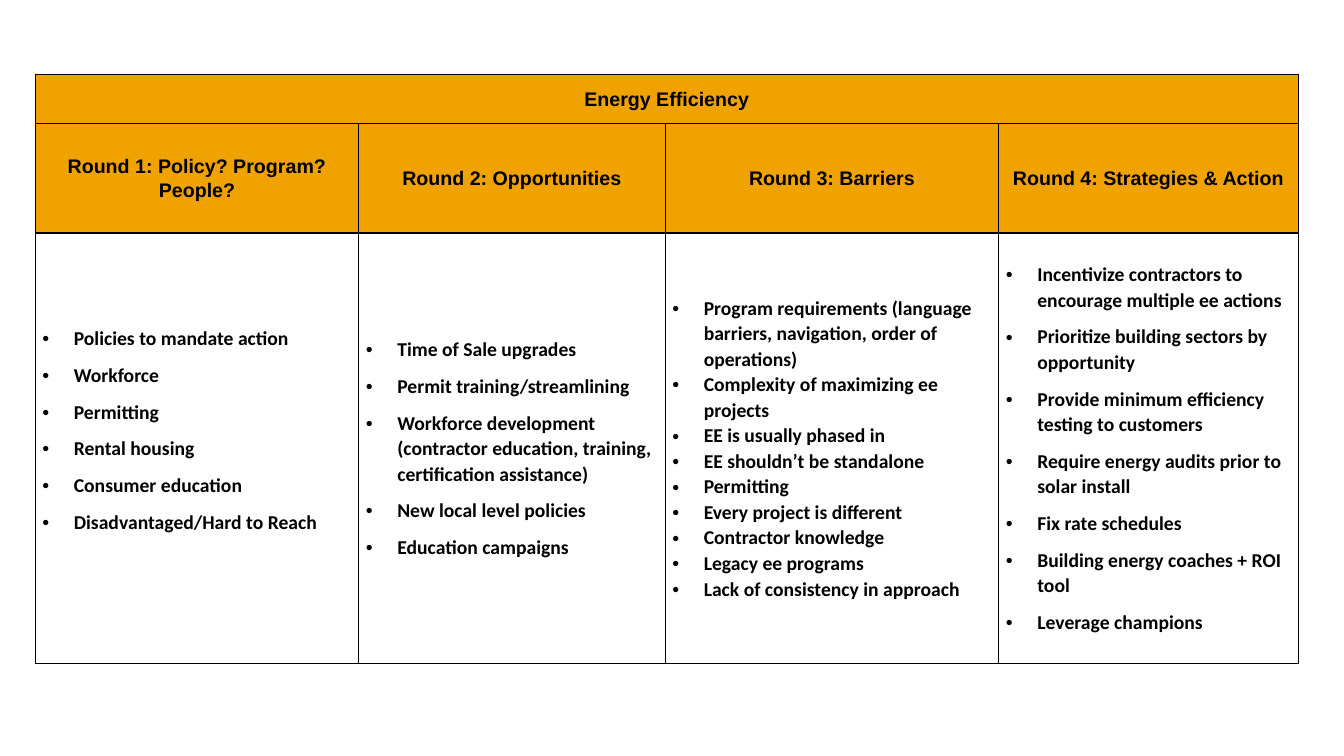
import pptx
import pptx.util
import pptx.dml.color
import pptx.enum.text
import pptx.oxml
import pptx.oxml.ns

TITLE = "Energy Efficiency"
ROUNDS = [
    {"heading": "Round 1: Policy? Program? People?", "width": 231.1, "space_after": 8, "bottom": 26,
     "points": ["Policies to mandate action", "Workforce", "Permitting", "Rental housing",
                "Consumer education", "Disadvantaged/Hard to Reach"]},
    {"heading": "Round 2: Opportunities", "width": 218.9, "space_after": 8, "bottom": 0,
     "points": ["Time of Sale upgrades", "Permit training/streamlining",
                "Workforce development (contractor education, training, certification assistance)",
                "New local level policies", "Education campaigns"]},
    {"heading": "Round 3: Barriers", "width": 238.3, "space_after": 0, "bottom": 0,
     "points": ["Program requirements (language barriers, navigation, order of operations)",
                "Complexity of maximizing ee projects", "EE is usually phased in",
                "EE shouldn’t be standalone", "Permitting", "Every project is different",
                "Contractor knowledge", "Legacy ee programs", "Lack of consistency in approach"]},
    {"heading": "Round 4: Strategies & Action", "width": 213.9, "space_after": 8, "bottom": 0,
     "points": ["Incentivize contractors to encourage multiple ee actions",
                "Prioritize building sectors by opportunity",
                "Provide minimum efficiency testing to customers",
                "Require energy audits prior to solar install", "Fix rate schedules",
                "Building energy coaches + ROI tool", "Leverage champions"]},
]
COLORS = {"header": "EFA200", "ink": "000000"}
ROW_HEIGHTS = [34.6, 78.5, 307.2]
TABLE_LEFT, TABLE_TOP = 25.2, 53.4
SIDE_INSET = 5.04
BULLET_INDENT = 22.5

Pt = pptx.util.Pt


def color(name):
    return pptx.dml.color.RGBColor.from_string(COLORS[name])


def add_border(cell):
    properties = cell._tc.get_or_add_tcPr()
    for position, side in enumerate(("lnL", "lnR", "lnT", "lnB")):
        line = pptx.oxml.parse_xml(
            f'<a:{side} {pptx.oxml.ns.nsdecls("a")} w="{Pt(1)}"><a:solidFill>'
            f'<a:srgbClr val="{COLORS["ink"]}"/></a:solidFill></a:{side}>')
        properties.insert(position, line)


def add_bullet(paragraph):
    properties = paragraph._p.get_or_add_pPr()
    properties.set("marL", str(Pt(BULLET_INDENT)))
    properties.set("indent", str(-Pt(BULLET_INDENT)))
    for tag, name, value in (("buFont", "typeface", "Arial"), ("buChar", "char", "•")):
        properties.append(pptx.oxml.parse_xml(
            f'<a:{tag} {pptx.oxml.ns.nsdecls("a")} {name}="{value}"/>'))


def write_cell(cell, lines, font, space_after=8, bottom=0, header=False):
    cell.margin_left = cell.margin_right = Pt(SIDE_INSET)
    cell.margin_top, cell.margin_bottom = Pt(0), Pt(bottom)
    cell.vertical_anchor = pptx.enum.text.MSO_ANCHOR.MIDDLE
    for index, line in enumerate(lines):
        frame = cell.text_frame
        paragraph = frame.add_paragraph() if index else frame.paragraphs[0]
        paragraph.line_spacing = 1.07
        paragraph.space_after = Pt(space_after)
        if header:
            paragraph.alignment = pptx.enum.text.PP_ALIGN.CENTER
        else:
            add_bullet(paragraph)
        run = paragraph.add_run()
        run.text = line
        run.font.name = font
        run.font.size = Pt(14)
        run.font.bold = True
        run.font.color.rgb = color("ink")
    if header:
        cell.fill.solid()
        cell.fill.fore_color.rgb = color("header")
    else:
        cell.fill.background()


def main():
    presentation = pptx.Presentation()
    presentation.slide_width, presentation.slide_height = Pt(960), Pt(540)
    slide = presentation.slides.add_slide(presentation.slide_layouts[6])
    table = slide.shapes.add_table(
        len(ROW_HEIGHTS), len(ROUNDS), Pt(TABLE_LEFT), Pt(TABLE_TOP),
        Pt(sum(part["width"] for part in ROUNDS)), Pt(sum(ROW_HEIGHTS))).table
    table.first_row = table.horz_banding = False
    for row, height in zip(table.rows, ROW_HEIGHTS):
        row.height = Pt(height)
    table.cell(0, 0).merge(table.cell(0, len(ROUNDS) - 1))
    write_cell(table.cell(0, 0), [TITLE], "Arial", header=True)
    for column, part in enumerate(ROUNDS):
        table.columns[column].width = Pt(part["width"])
        write_cell(table.cell(1, column), [part["heading"]], "Arial", header=True)
        write_cell(table.cell(2, column), part["points"], "Calibri",
                   part["space_after"], part["bottom"])
    for cell in table.iter_cells():
        add_border(cell)
    presentation.save("out.pptx")


if __name__ == "__main__":
    main()
